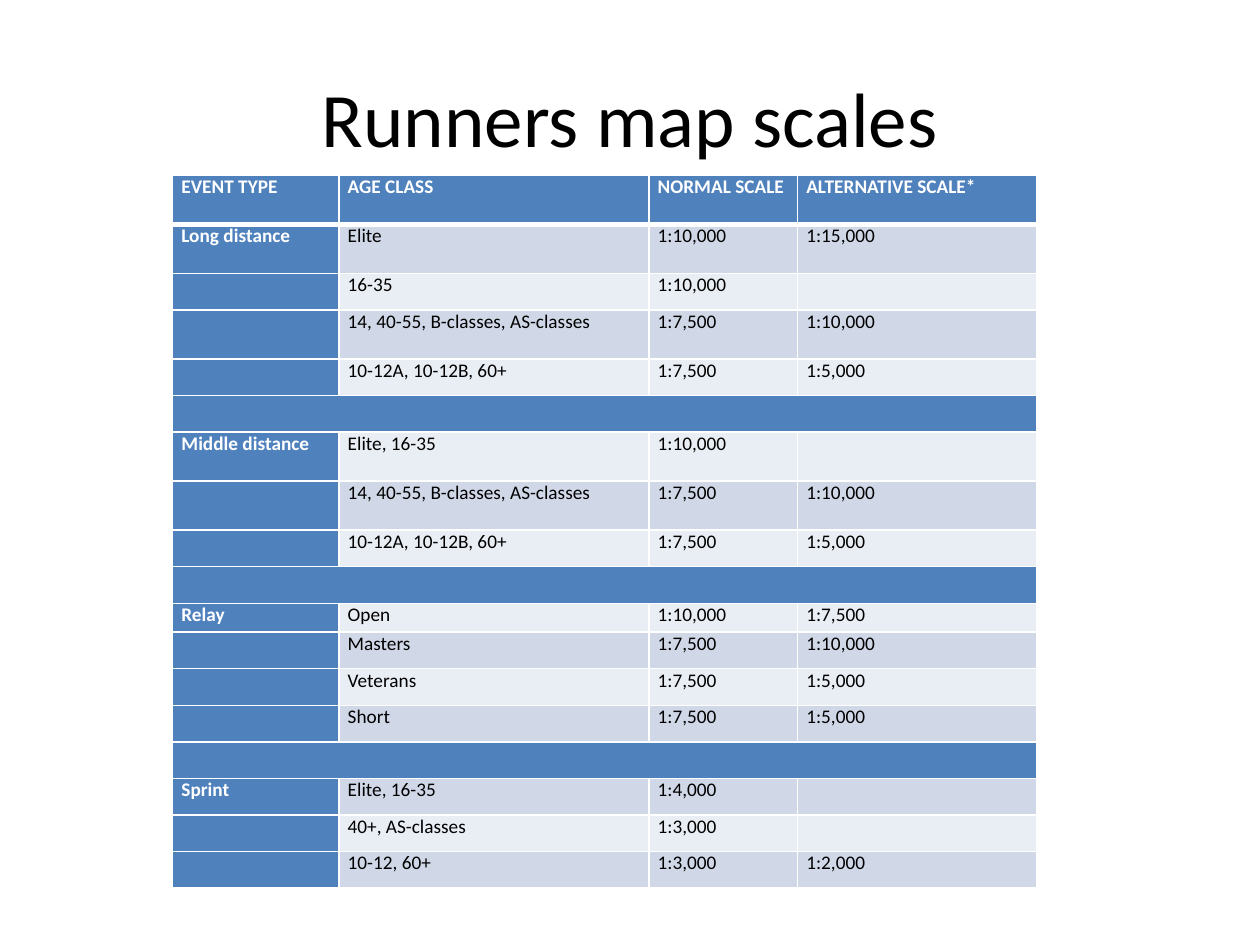
from lxml.etree import SubElement
from pptx import Presentation
from pptx.dml.color import RGBColor
from pptx.enum.text import MSO_ANCHOR, PP_ALIGN
from pptx.oxml.ns import qn
from pptx.util import Inches, Pt

FONT = "Calibri"
COLORS = {"accent": "4F81BD", "odd": "D0D8E8", "even": "E9EDF4",
          "line": "FFFFFF", "heading": "FFFFFF", "text": "000000"}
COLUMN_WIDTHS = [1.32, 2.46, 1.18, 1.9]
TALL, MEDIUM, SHORT = 0.39, 0.29, 0.23

header = ("EVENT TYPE", "AGE CLASS", "NORMAL SCALE", "ALTERNATIVE SCALE*")
events = {
    "Long distance": [
        (TALL, "Elite", "1:10,000", "1:15,000"),
        (MEDIUM, "16-35", "1:10,000", ""),
        (TALL, "14, 40-55, B-classes, AS-classes", "1:7,500", "1:10,000"),
        (MEDIUM, "10-12A, 10-12B, 60+", "1:7,500", "1:5,000")],
    "Middle distance": [
        (TALL, "Elite, 16-35", "1:10,000", ""),
        (TALL, "14, 40-55, B-classes, AS-classes", "1:7,500", "1:10,000"),
        (MEDIUM, "10-12A, 10-12B, 60+", "1:7,500", "1:5,000")],
    "Relay": [
        (SHORT, "Open", "1:10,000", "1:7,500"),
        (MEDIUM, "Masters", "1:7,500", "1:10,000"),
        (MEDIUM, "Veterans", "1:7,500", "1:5,000"),
        (MEDIUM, "Short", "1:7,500", "1:5,000")],
    "Sprint": [
        (MEDIUM, "Elite, 16-35", "1:4,000", ""),
        (MEDIUM, "40+, AS-classes", "1:3,000", ""),
        (MEDIUM, "10-12, 60+", "1:3,000", "1:2,000")],
}


def add_text(paragraph, text, size, color, bold=False):
    run = paragraph.add_run()
    run.text = text
    run.font.name = FONT
    run.font.size = Pt(size)
    run.font.bold = bold
    run.font.color.rgb = RGBColor.from_string(COLORS[color])


def add_borders(cell, top, bottom):
    """Draw the four cell borders; top and bottom are widths in points."""
    properties = cell._tc.get_or_add_tcPr()
    for side, width in (("L", 1), ("R", 1), ("T", top), ("B", bottom)):
        line = SubElement(properties, qn(f"a:ln{side}"), w=str(Pt(width)))
        fill = SubElement(line, qn("a:solidFill"))
        SubElement(fill, qn("a:srgbClr"), val=COLORS["line"])


# A full-width band separates each event from the one before
rows = [(TALL, header)]
band_rows = []
for event, classes in events.items():
    if len(rows) > 1:
        band_rows.append(len(rows))
        rows.append((MEDIUM, ("", "", "", "")))
    for position, (height, *scales) in enumerate(classes):
        rows.append((height, (event if position == 0 else "", *scales)))

presentation = Presentation()
presentation.slide_width = Inches(10)
presentation.slide_height = Inches(7.5)
slide = presentation.slides.add_slide(presentation.slide_layouts[6])

title = slide.shapes.add_textbox(Inches(0.5), Inches(0.3), Inches(9), Inches(1.25)).text_frame
title.word_wrap = True
title.vertical_anchor = MSO_ANCHOR.MIDDLE
title.paragraphs[0].alignment = PP_ALIGN.CENTER
add_text(title.paragraphs[0], "Runners map scales", 44, "text")

scale_table = slide.shapes.add_table(
    len(rows), len(COLUMN_WIDTHS), Inches(1.37), Inches(1.39),
    Inches(sum(COLUMN_WIDTHS)), Inches(sum(height for height, _ in rows))).table
scale_table.first_col = True
for column, width in zip(scale_table.columns, COLUMN_WIDTHS):
    column.width = Inches(width)

for r, (height, texts) in enumerate(rows):
    scale_table.rows[r].height = Inches(height)
    for c, text in enumerate(texts):
        cell = scale_table.cell(r, c)
        cell.margin_left = cell.margin_right = Inches(0.07)
        cell.margin_top = cell.margin_bottom = 0
        add_borders(cell, top=3 if r == 1 else 1, bottom=3 if r == 0 else 1)
        is_heading = r == 0 or c == 0 or r in band_rows
        shade = "accent" if is_heading else ("even", "odd")[r % 2]
        cell.fill.solid()
        cell.fill.fore_color.rgb = RGBColor.from_string(COLORS[shade])
        paragraph = cell.text_frame.paragraphs[0]
        if text:
            add_text(paragraph, text, 11, "heading" if is_heading else "text", is_heading)
        else:
            # Keeps empty cells from stretching their row
            paragraph._p.get_or_add_endParaRPr().set("sz", "1100")

for r in band_rows:
    scale_table.cell(r, 0).merge(scale_table.cell(r, len(COLUMN_WIDTHS) - 1))

presentation.save("out.pptx")
